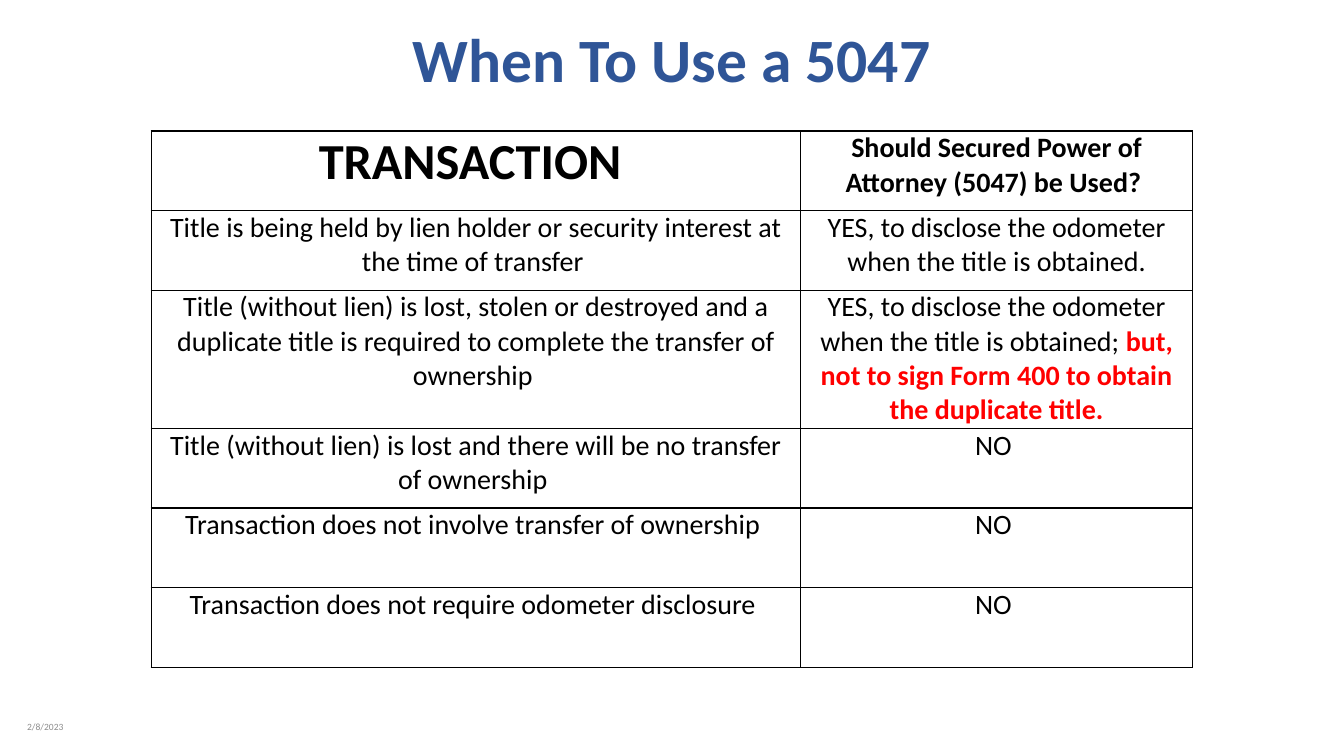
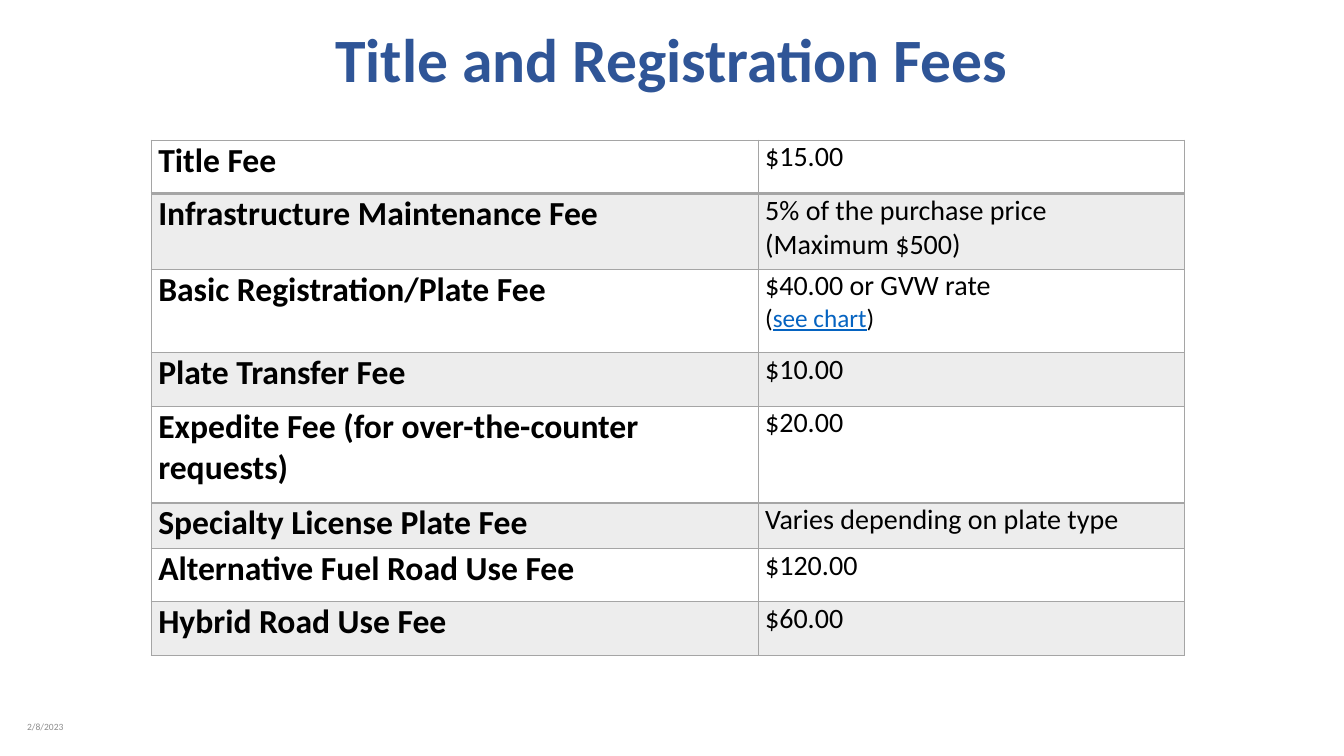
from dataclasses import dataclass, field

from lxml.etree import SubElement
from pptx import Presentation
from pptx.dml.color import RGBColor as Rgb
from pptx.enum.text import MSO_ANCHOR as Anchor, PP_ALIGN as Align
from pptx.oxml.ns import qn
from pptx.util import Emu, Pt

EMU_PER_PX = 9144


@dataclass(frozen=True)
class Theme:
    font: str = "Calibri"
    black: str = "000000"
    gray: str = "A5A5A5"
    band_alpha: int = 20
    styles: dict = field(default_factory=lambda: {
        "title": ("2F5597", {"size": 44, "bold": True}),
        "date": ("8C8C8C", {"size": 6.8}),
        "banner": ("000000", {"size": 36, "bold": True}),
        "heading": ("000000", {"size": 20, "bold": True}),
        "body": ("000000", {"size": 20, "bold": False}),
        "warning": ("FF0000", {"size": 20, "bold": True}),
        "fee": ("000000", {"size": 24, "bold": True}),
        "note": ("000000", {"size": 18, "bold": False}),
        "reference": ("0563C1", {"size": 18, "bold": False, "underline": True}),
    })


THEME = Theme()

TRANSACTIONS = [
    ("Title is being held by lien holder or security interest at the time of transfer ",
     "YES, to disclose the odometer when the title is obtained."),
    ("Title (without lien) is lost, stolen or destroyed and a duplicate title is required "
     "to complete the transfer of ownership ",
     [[("YES, to disclose the odometer when the title is obtained; ", "body"),
       ("but, not to sign Form 400 to obtain the duplicate title.", "warning")]]),
    ("Title (without lien) is lost and there will be no transfer of ownership ", "NO "),
    ("Transaction does not involve transfer of ownership ", "NO "),
    ("Transaction does not require odometer disclosure ", "NO "),
]

FEES = [
    ("Title Fee", "$15.00"),
    ("Infrastructure Maintenance Fee", "5% of the purchase price\v(Maximum $500)"),
    ("Basic Registration/Plate Fee",
     [[("$40.00 or GVW rate", "body")],
      [("(", "note"), ("see chart", "reference"), (")", "note")]]),
    ("Plate Transfer Fee", "$10.00"),
    ("Expedite Fee (for over-the-counter requests)", "$20.00"),
    ("Specialty License Plate Fee", "Varies depending on plate type"),
    ("Alternative Fuel Road Use Fee", "$120.00"),
    ("Hybrid Road Use Fee", "$60.00"),
]


def px(length):
    return Emu(length * EMU_PER_PX)


def set_all(target, values):
    for name, value in values.items():
        setattr(target, name, value)


def add_run(paragraph, text, style):
    color, values = THEME.styles[style]
    for index, line in enumerate(text.split("\v")):
        if index:
            paragraph.add_line_break()
        run = paragraph.add_run()
        run.text = line
        set_all(run.font, {**values, "name": THEME.font, "size": Pt(values["size"])})
        run.font.color.rgb = Rgb.from_string(color)


def write(frame, content, style, **layout):
    paragraphs = [[(content, style)]] if isinstance(content, str) else content
    for index, runs in enumerate(paragraphs):
        paragraph = frame.add_paragraph() if index else frame.paragraphs[0]
        set_all(paragraph, layout)
        for text, run_style in runs:
            add_run(paragraph, text, run_style)


def add_text(slide, box, text, style, **layout):
    frame = slide.shapes.add_textbox(*map(px, box)).text_frame
    set_all(frame, {"word_wrap": True, "vertical_anchor": Anchor.MIDDLE})
    write(frame, text, style, **layout)


def add_border(cell, side, color, points):
    line = SubElement(cell._tc.get_or_add_tcPr(), qn(f"a:ln{side}"), w=str(Pt(points)))
    SubElement(SubElement(line, qn("a:solidFill")), qn("a:srgbClr"), val=color)


def fill_cell(cell, banded):
    if not banded:
        cell.fill.background()
        return
    cell.fill.solid()
    cell.fill.fore_color.rgb = Rgb.from_string(THEME.gray)
    color = cell._tc.tcPr.find(f"{qn('a:solidFill')}/{qn('a:srgbClr')}")
    SubElement(color, qn("a:alpha"), val=str(THEME.band_alpha * 1000))


def add_grid(slide, origin, widths, heights, rows, styles, align, border,
             header_styles=None, header_rule=1, banded=False):
    box = (*origin, sum(widths), sum(heights))
    table = slide.shapes.add_table(len(heights), len(widths), *map(px, box)).table
    set_all(table, {"first_row": False, "horz_banding": False})
    for column, width in zip(table.columns, widths):
        column.width = px(width)
    for index, (row, height, contents) in enumerate(zip(table.rows, heights, rows)):
        row.height = px(height)
        row_styles = header_styles if header_styles and index == 0 else styles
        rules = {"L": 1, "R": 1,
                 "T": header_rule if index == 1 else 1,
                 "B": header_rule if index == 0 else 1}
        for cell, content, style in zip(row.cells, contents, row_styles):
            set_all(cell, {"margin_left": px(7), "margin_right": px(7),
                           "margin_top": 0, "margin_bottom": 0})
            for side, points in rules.items():
                add_border(cell, side, border, points)
            fill_cell(cell, banded and index % 2 == 1)
            write(cell.text_frame, content, style, alignment=align)


def add_page(deck, title):
    slide = deck.slides.add_slide(deck.slide_layouts[6])
    add_text(slide, (150, 25, 1033, 74), title, "title",
             alignment=Align.CENTER, line_spacing=0.9)
    add_text(slide, (17, 701, 300, 40), "2/8/2023", "date")
    return slide


def main():
    deck = Presentation()
    set_all(deck, {"slide_width": px(1333), "slide_height": px(750)})

    usage = add_page(deck, "When To Use a 5047")
    header = ("TRANSACTION ", "Should Secured Power of Attorney (5047) be Used? ")
    add_grid(usage, (150, 130), (644, 389), (79, 79, 137, 79, 79, 79),
             [header, *TRANSACTIONS], ("body", "body"), Align.CENTER, THEME.black,
             header_styles=("banner", "heading"))

    fees = add_page(deck, "Title and Registration Fees")
    add_grid(fees, (150, 139), (602, 423), (53, 75, 83, 53, 96, 45, 53, 53),
             FEES, ("fee", "body"), Align.LEFT, THEME.gray,
             header_rule=2, banded=True)

    deck.save("out.pptx")


if __name__ == "__main__":
    main()
